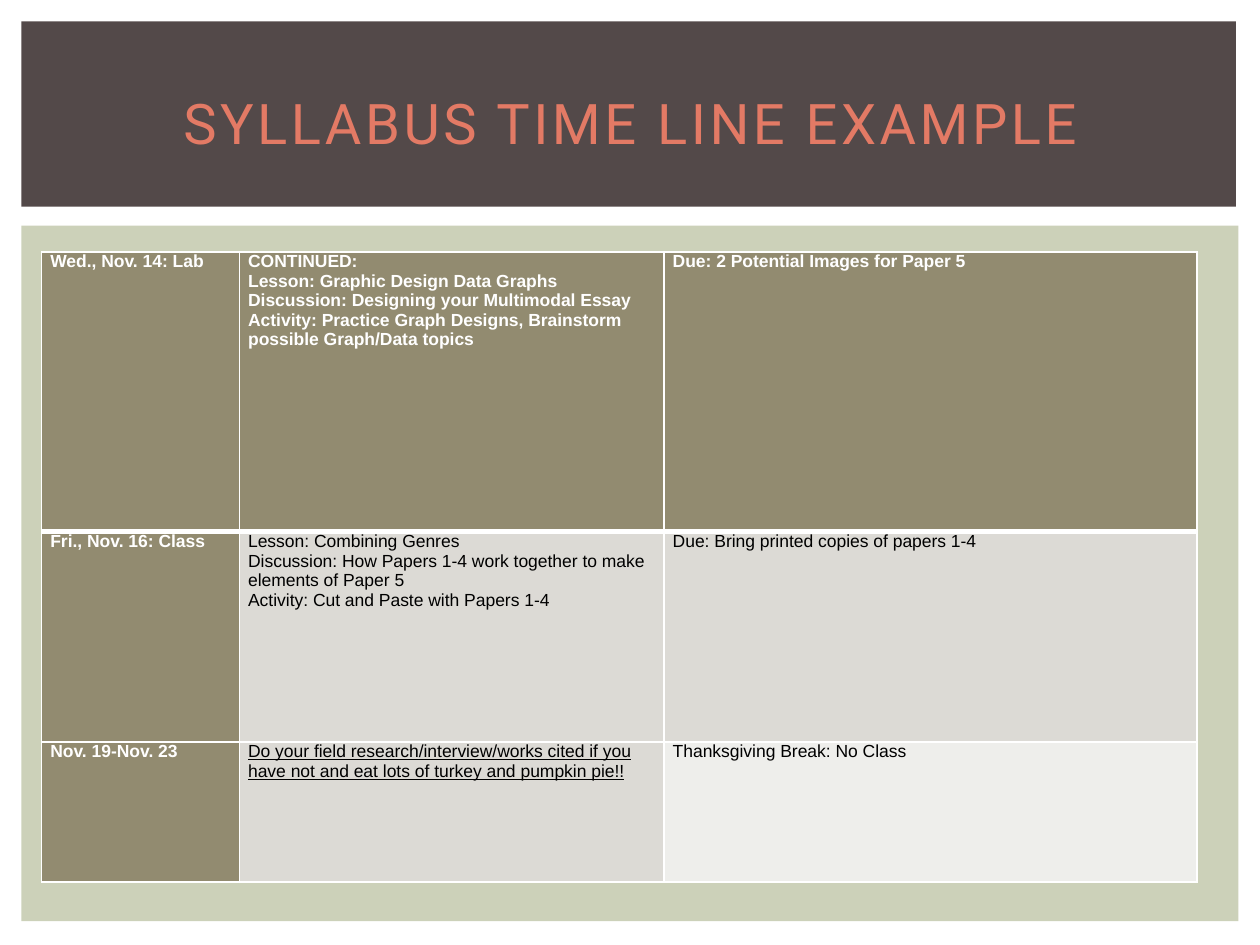
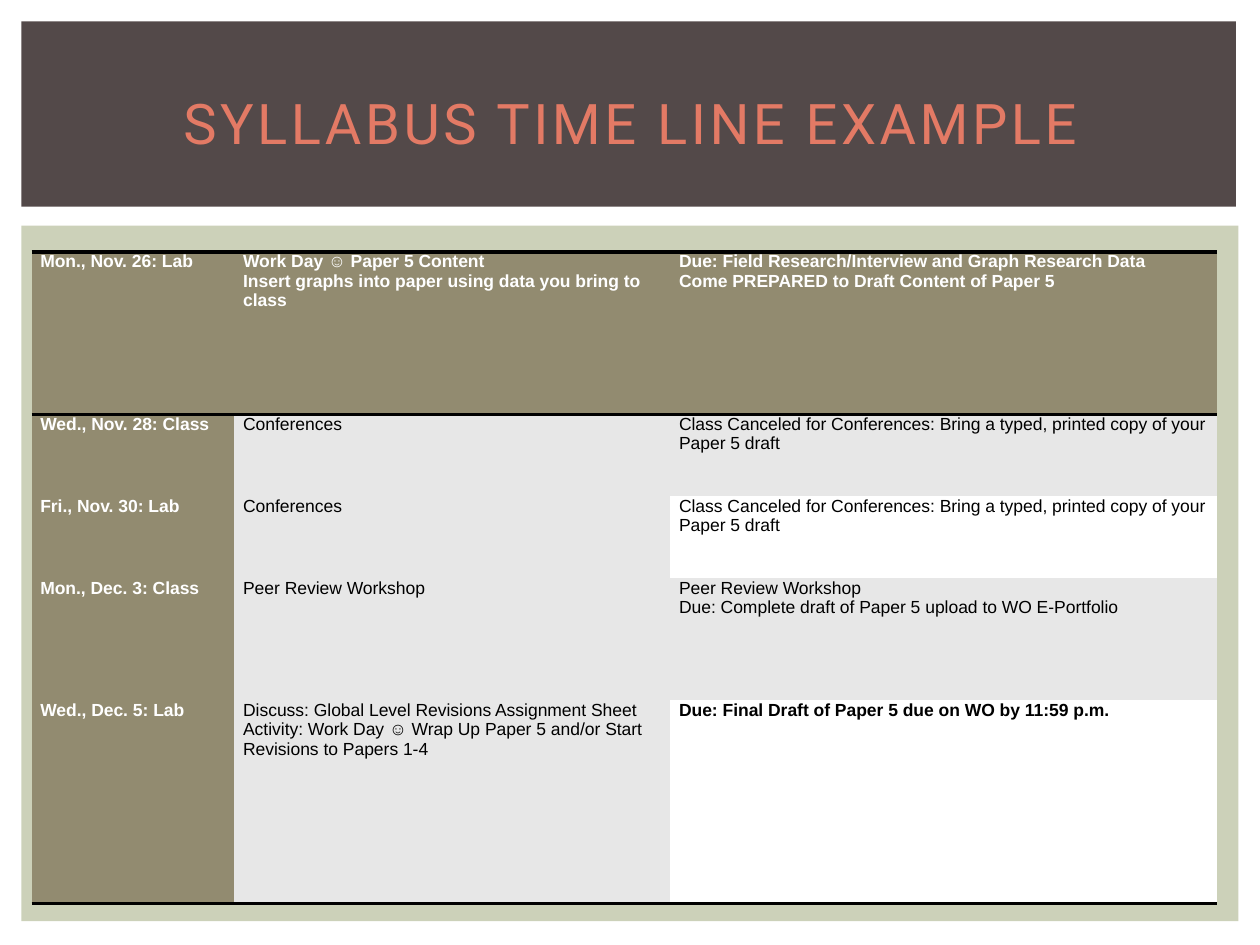
import pptx
import pptx.util
import pptx.dml.color
import pptx.enum.shapes
import pptx.enum.text
import pptx.oxml.ns
import lxml.etree

Inches = pptx.util.Inches
Pt = pptx.util.Pt

COLOURS = {
    "panel": "CCD1B9", "band": "534949", "title": "E37A65",
    "header": "928B70", "white": "FFFFFF", "black": "000000",
    "warm": "DCDAD5", "warm_light": "EEEEEB", "grey": "E7E7E7",
}
NO_GRID_STYLE = "{2D5ABB26-0587-4C30-8999-92F81FD0307C}"
BODY_FONT, TITLE_FONT = "Arial", "Roboto"
TITLE = "SYLLABUS TIME LINE EXAMPLE"


def rgb(name):
    return pptx.dml.color.RGBColor.from_string(COLOURS[name])


class SyllabusDeck:
    """Holds the shared style and the current slide."""

    def __init__(self):
        self.deck = pptx.Presentation()
        self.deck.slide_width = Inches(10)
        self.deck.slide_height = Inches(7.5)
        self.page = None

    def add_page(self):
        self.page = self.deck.slides.add_slide(self.deck.slide_layouts[6])
        self.block(0.17, 1.79, 9.66, 5.52, "panel")
        self.block(0.17, 0.17, 9.64, 1.47, "band")
        self.title(TITLE)

    def block(self, left, top, width, height, colour):
        shape = self.page.shapes.add_shape(
            pptx.enum.shapes.MSO_SHAPE.RECTANGLE,
            Inches(left), Inches(top), Inches(width), Inches(height))
        shape.shadow.inherit = False
        shape.fill.solid()
        shape.fill.fore_color.rgb = rgb(colour)
        shape.line.fill.background()

    def title(self, text):
        box = self.page.shapes.add_textbox(
            Inches(0.42), Inches(0.39), Inches(9.17), Inches(1.15))
        frame = box.text_frame
        frame.word_wrap = True
        frame.vertical_anchor = pptx.enum.text.MSO_ANCHOR.MIDDLE
        para = frame.paragraphs[0]
        para.alignment = pptx.enum.text.PP_ALIGN.CENTER
        span = self.span(para, text, TITLE_FONT, 32, "title")
        span.font._element.set("spc", "200")

    def span(self, para, text, font, size, colour, bold=False, underline=False):
        span = para.add_run()
        span.text = text
        span.font.name = font
        span.font.size = Pt(size)
        span.font.color.rgb = rgb(colour)
        span.font.bold = bold
        span.font.underline = underline
        return span

    def border(self, cell, side, rule):
        """Draw one cell edge; a rule is (colour, points) or None."""
        qn = pptx.oxml.ns.qn
        line = lxml.etree.SubElement(cell._tc.get_or_add_tcPr(), qn("a:ln" + side))
        if rule is None:
            lxml.etree.SubElement(line, qn("a:noFill"))
            return
        colour, points = rule
        line.set("w", str(Pt(points)))
        fill = lxml.etree.SubElement(line, qn("a:solidFill"))
        lxml.etree.SubElement(fill, qn("a:srgbClr")).set("val", COLOURS[colour])

    def cell(self, cell, lines, fill, colour, bold, underline):
        cell.margin_left = cell.margin_right = Inches(0.07)
        cell.margin_top = cell.margin_bottom = 0
        cell.fill.solid()
        cell.fill.fore_color.rgb = rgb(fill)
        frame = cell.text_frame
        for index, text in enumerate(lines):
            para = frame.paragraphs[0] if index == 0 else frame.add_paragraph()
            self.span(para, text, BODY_FONT, 10, colour, bold, underline)

    def timeline(self, left, top, widths, heights, rows, fills, across, down,
                 bold=(), underlined=()):
        """Add a table; across holds one rule per horizontal edge, down is for all vertical ones."""
        frame = self.page.shapes.add_table(
            len(heights), len(widths), Inches(left), Inches(top),
            Inches(sum(widths)), Inches(sum(heights)))
        table = frame.table
        table.first_row = table.horz_banding = False
        table._tbl.tblPr.find(pptx.oxml.ns.qn("a:tableStyleId")).text = NO_GRID_STYLE
        for column, width in zip(table.columns, widths):
            column.width = Inches(width)
        for row, height in zip(table.rows, heights):
            row.height = Inches(height)
        for r, row in enumerate(rows):
            for c, lines in enumerate(row):
                cell = table.cell(r, c)
                edges = {"L": down, "R": down, "T": across[r], "B": across[r + 1]}
                for side, rule in edges.items():
                    self.border(cell, side, rule)
                heading = r == 0 or c == 0
                self.cell(cell, lines,
                          "header" if heading else fills[r - 1][c - 1],
                          "white" if heading else "black",
                          heading or (r, c) in bold, (r, c) in underlined)


# Shared wording
CANCELED = ["Class Canceled for Conferences: Bring a typed, printed copy of your Paper 5 draft"]

NOVEMBER_ROWS = [
    [["Wed., Nov. 14: Lab"],
     ["CONTINUED:",
      "Lesson: Graphic Design Data Graphs",
      "Discussion: Designing your Multimodal Essay",
      "Activity: Practice Graph Designs, Brainstorm possible Graph/Data topics"],
     ["Due: 2 Potential Images for Paper 5"]],
    [["Fri., Nov. 16: Class"],
     ["Lesson: Combining Genres",
      "Discussion: How Papers 1-4 work together to make elements of Paper 5",
      "Activity: Cut and Paste with Papers 1-4"],
     ["Due: Bring printed copies of papers 1-4"]],
    [["Nov. 19-Nov. 23"],
     ["Do your field research/interview/works cited if you have not "
      "and eat lots of turkey and pumpkin pie!!"],
     ["Thanksgiving Break: No Class"]],
]

DECEMBER_ROWS = [
    [["Mon., Nov. 26: Lab"],
     ["Work Day ☺ Paper 5 Content",
      "Insert graphs into paper using data you bring to class"],
     ["Due: Field Research/Interview and Graph Research Data",
      "Come PREPARED to Draft Content of Paper 5"]],
    [["Wed., Nov. 28: Class"], ["Conferences"], CANCELED],
    [["Fri., Nov. 30: Lab"], ["Conferences"], CANCELED],
    [["Mon., Dec. 3: Class"],
     ["Peer Review Workshop"],
     ["Peer Review Workshop",
      "Due: Complete draft of Paper 5 upload to WO E-Portfolio"]],
    [["Wed., Dec. 5: Lab"],
     ["Discuss: Global Level Revisions Assignment Sheet",
      "Activity: Work Day ☺ Wrap Up Paper 5 and/or Start Revisions to Papers 1-4"],
     ["Due: Final Draft of Paper 5 due on WO by 11:59 p.m."]],
]


def main():
    syllabus = SyllabusDeck()

    # Slide 1: mid-November, white grid
    thin, thick = ("white", 1), ("white", 3)
    syllabus.add_page()
    syllabus.timeline(
        0.33, 2, [1.57, 3.37, 4.23], [2.22, 1.67, 1.11], NOVEMBER_ROWS,
        fills=[("warm", "warm"), ("warm", "warm_light")],
        across=[thin, thick, thin, thin], down=thin, underlined={(2, 1)})

    # Slide 2: end of term, black rules around the heading and at the foot
    rule = ("black", 2)
    syllabus.add_page()
    syllabus.timeline(
        0.25, 2, [1.61, 3.46, 4.34], [1.29, 0.65, 0.65, 0.97, 1.61], DECEMBER_ROWS,
        fills=[("grey", "grey"), ("grey", "white")] * 2,
        across=[rule, rule, None, None, None, rule], down=None, bold={(4, 2)})

    syllabus.deck.save("out.pptx")


if __name__ == "__main__":
    main()
